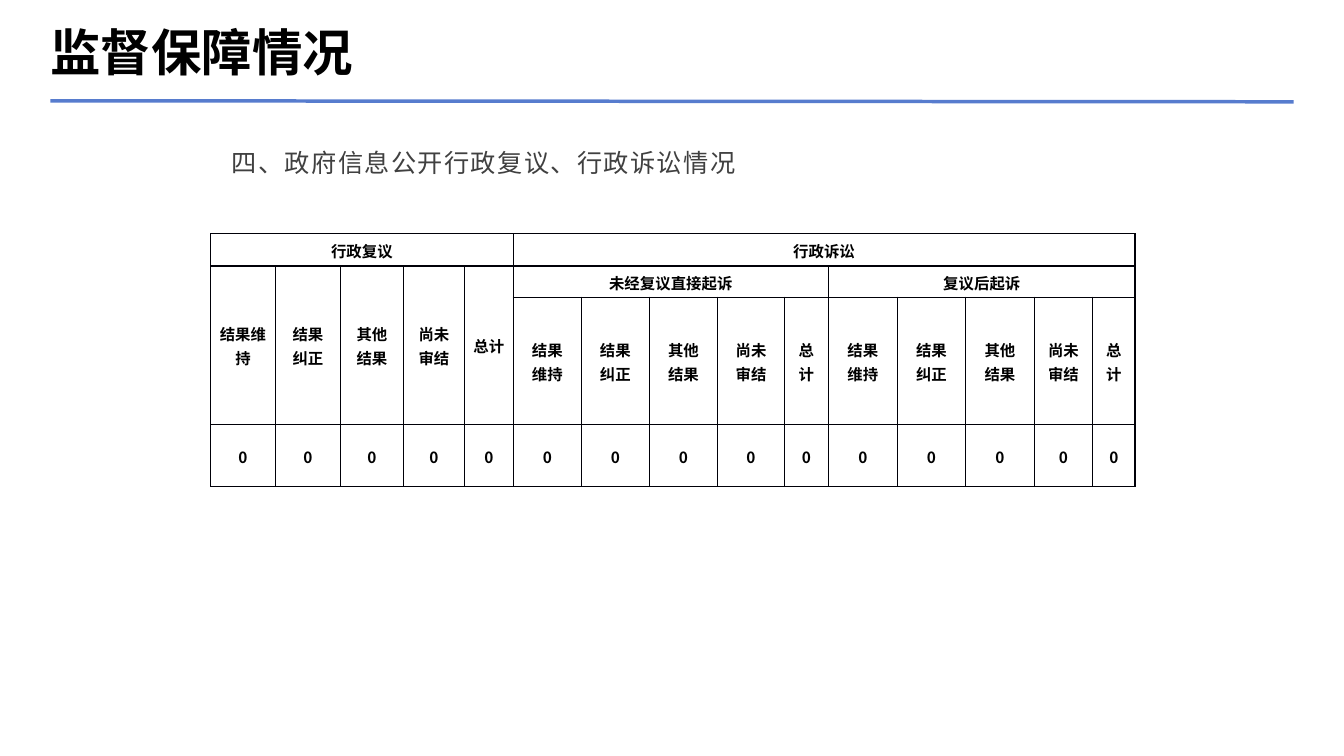
from lxml import etree
from pptx import Presentation, util as u
from pptx.dml.color import RGBColor
from pptx.enum import shapes, text
from pptx.oxml.ns import qn

FONT = "Noto Sans CJK SC"
COLUMN_WIDTHS = [0.64, 0.65, 0.62, 0.61, 0.48,
                 0.68, 0.67, 0.68, 0.66, 0.44,
                 0.68, 0.68, 0.68, 0.58, 0.42]
ROW_HEIGHTS = [0.32, 0.31, 1.26, 0.62]
OUTCOMES = ["结果\n维持", "结果\n纠正", "其他\n结果", "尚未\n审结", "总计"]


def color(value):
    return RGBColor.from_string(value)


def write(frame, content, size, fill="000000", bold=False, align=None,
          line_spacing=None, space_after=None, tracking=None):
    """Fill a text frame with one paragraph per line of content."""
    for index, line in enumerate(content.split("\n")):
        para = frame.add_paragraph() if index else frame.paragraphs[0]
        para.alignment = align
        para.line_spacing = line_spacing
        para.space_after = space_after
        span = para.add_run()
        span.text = line
        span.font.size = u.Pt(size)
        span.font.bold = bold
        span.font.color.rgb = color(fill)
        span.font.name = FONT
        properties = span.font._element
        etree.SubElement(properties, qn("a:ea"), typeface=FONT)
        if tracking:
            properties.set("spc", str(tracking * 100))


def add_text(page, left, top, width, height, content, inset=(0, 0), **style):
    box = page.shapes.add_textbox(*map(u.Inches, (left, top, width, height)))
    frame = box.text_frame
    frame.word_wrap = True
    frame.vertical_anchor = text.MSO_ANCHOR.MIDDLE
    frame.margin_left = frame.margin_right = u.Inches(inset[0])
    frame.margin_top = frame.margin_bottom = u.Inches(inset[1])
    write(frame, content, **style)


def add_rule(page, x1, y1, x2, y2, stroke, width):
    rule = page.shapes.add_connector(
        shapes.MSO_CONNECTOR.STRAIGHT, *map(u.Inches, (x1, y1, x2, y2)))
    rule.line.color.rgb = color(stroke)
    rule.line.width = u.Pt(width)
    etree.SubElement(rule._element.spPr, qn("a:effectLst"))


def format_cell(cell):
    cell.margin_left = cell.margin_right = u.Inches(0.07)
    cell.margin_top = cell.margin_bottom = 0
    cell.vertical_anchor = text.MSO_ANCHOR.MIDDLE
    properties = cell._tc.get_or_add_tcPr()
    for side in ("lnL", "lnR", "lnT", "lnB"):
        border = etree.SubElement(properties, qn(f"a:{side}"), w=str(u.Pt(1)))
        solid = etree.SubElement(border, qn("a:solidFill"))
        etree.SubElement(solid, qn("a:srgbClr"), val="000008")
    cell.fill.background()


def add_case_table(page):
    frame = page.shapes.add_table(
        len(ROW_HEIGHTS), len(COLUMN_WIDTHS), u.Inches(2.09), u.Inches(2.32),
        u.Inches(sum(COLUMN_WIDTHS)), u.Inches(sum(ROW_HEIGHTS)))
    table = frame.table
    table.first_row = table.horz_banding = False
    for column, width in zip(table.columns, COLUMN_WIDTHS):
        column.width = u.Inches(width)
    for row, height in zip(table.rows, ROW_HEIGHTS):
        row.height = u.Inches(height)
    for cell in table.iter_cells():
        format_cell(cell)

    def put(row, column, content, rows=1, columns=1):
        cell = table.cell(row, column)
        if rows * columns > 1:
            cell.merge(table.cell(row + rows - 1, column + columns - 1))
        write(cell.text_frame, content, size=11, bold=True,
              align=text.PP_ALIGN.CENTER, line_spacing=u.Pt(17))

    put(0, 0, "行政复议", columns=5)
    put(0, 5, "行政诉讼", columns=10)
    put(1, 5, "未经复议直接起诉", columns=5)
    put(1, 10, "复议后起诉", columns=5)
    for column, outcome in enumerate(["结果维持"] + OUTCOMES[1:]):
        put(1, column, outcome, rows=2)
    for column, outcome in enumerate(OUTCOMES * 2, start=5):
        put(2, column, outcome)
    for column in range(len(COLUMN_WIDTHS)):
        put(3, column, "0")


def main():
    deck = Presentation()
    deck.slide_width, deck.slide_height = u.Inches(13.33), u.Inches(7.5)
    page = deck.slides.add_slide(deck.slide_layouts[6])
    add_rule(page, 0.5, 1, 12.83, 1.01, "577CCE", 2.5)
    add_text(page, 0.5, 0.17, 12.33, 0.67, "监督保障情况", size=36, bold=True)
    add_text(page, 2.23, 0.94, 5.54, 1.28,
             "四、政府信息公开行政复议、行政诉讼情况", inset=(0.07, 0.03),
             size=18, fill="404040", line_spacing=1.2,
             space_after=u.Pt(8), tracking=1)
    add_case_table(page)
    deck.save("out.pptx")


if __name__ == "__main__":
    main()
